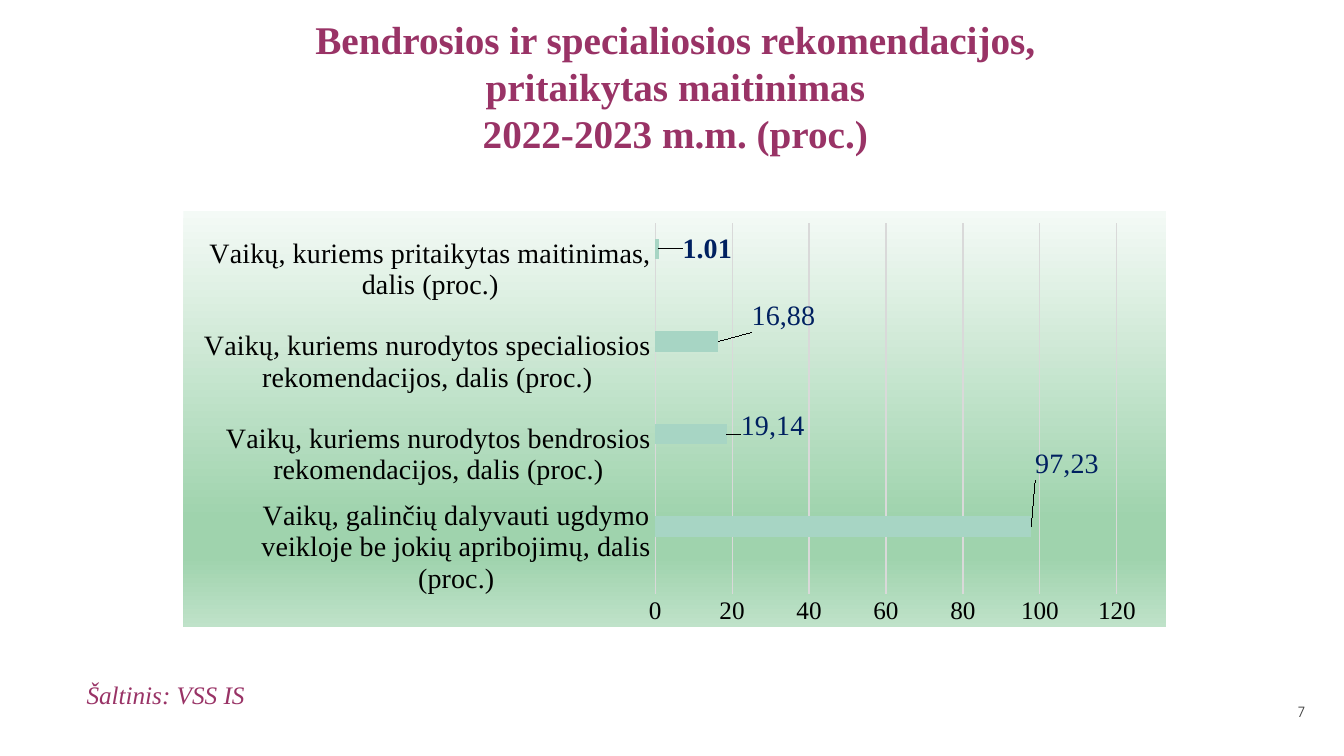
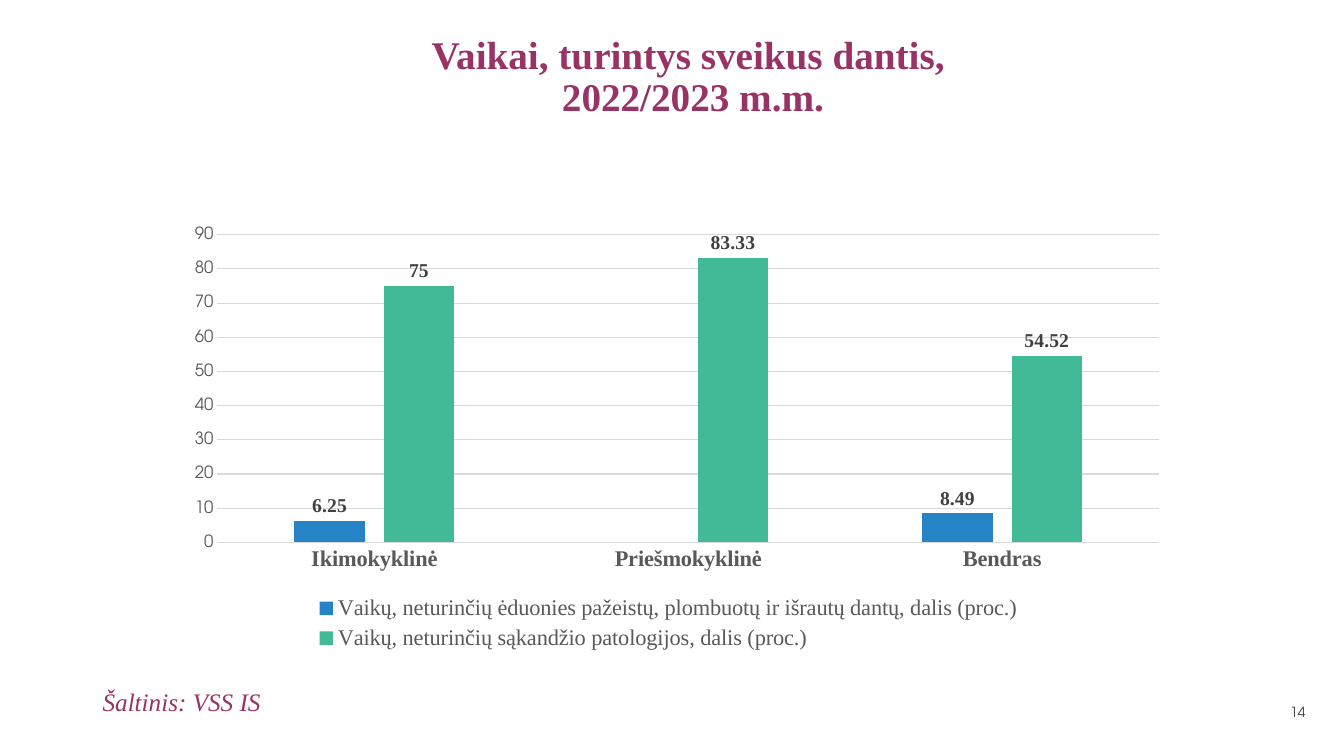
from lxml import etree
from pptx import Presentation
from pptx.chart.data import CategoryChartData
from pptx.dml.color import RGBColor
from pptx.enum.chart import XL_CHART_TYPE, XL_LABEL_POSITION, XL_LEGEND_POSITION, XL_TICK_MARK
from pptx.enum.text import MSO_ANCHOR, MSO_AUTO_SIZE, PP_ALIGN
from pptx.oxml import parse_xml
from pptx.oxml.ns import nsdecls, qn
from pptx.util import Pt

SERIF, SANS = "Times New Roman", "TeX Gyre Adventor"
PLUM, NAVY, BLACK, GREY, DARK, PALE = "993366", "002060", "000000", "595959", "404040", "D9D9D9"
SOURCE = "Šaltinis: VSS IS"

# Content; boxes are left, top, width, height in points
SLIDES = [
    dict(
        title="Bendrosios ir specialiosios rekomendacijos,\npritaikytas maitinimas\n2022-2023 m.m. (proc.)",
        head=(86.4, 7.2, 792, 108.7), anchor=MSO_ANCHOR.TOP, space=1.0,
        page="7", source=(54.7, 481.7),
        kind=XL_CHART_TYPE.BAR_CLUSTERED, box=(131, 150.5, 702, 297.4),
        plot=(0.48, 0.03, 0.47, 0.89), gap=150, overlap=0, top=120, step=20,
        cats=["Vaikų, galinčių dalyvauti ugdymo veikloje be jokių apribojimų, dalis (proc.)",
              "Vaikų, kuriems nurodytos bendrosios rekomendacijos, dalis (proc.)",
              "Vaikų, kuriems nurodytos specialiosios rekomendacijos, dalis (proc.)",
              "Vaikų, kuriems pritaikytas maitinimas, dalis (proc.)"],
        series=[("Series 1", [None] * 4, "379A7D"),
                ("Series 2", [None] * 4, "42BA97"),
                ("Series 3", [97.73, 18.69, 16.41, 1.01], "A7D5C4")],
        cat=dict(size=20, color=BLACK), line=None,
        val=dict(size=18, color=BLACK),
        label=dict(size=20, color=NAVY, bold=True),
        # Own label text (None shows the value), shift right, shift down
        moved=[("97,23", 0, -0.15), ("19,14", 0.01, -0.02), ("16,88", 0.03, -0.06), (None, 0.02, 0)],
        stops=[(0, "F4FAF6"), (74, "9FD3AD"), (83, "9FD3AD"), (100, "BFE2C9")],
    ),
    dict(
        title="Vaikai, turintys sveikus dantis, \n2022/2023 m.m.",
        head=(144, 5, 702, 100.8), anchor=MSO_ANCHOR.MIDDLE, space=0.9,
        page="14", source=(66.2, 486.7),
        kind=XL_CHART_TYPE.COLUMN_CLUSTERED, box=(119.5, 158.4, 715.7, 309.6),
        plot=(0.05, 0.03, 0.94, 0.71), gap=219, overlap=-27, top=90, step=10,
        cats=["Ikimokyklinė", "Priešmokyklinė", "Bendras"],
        series=[("Vaikų, neturinčių ėduonies pažeistų, plombuotų ir išrautų dantų, dalis (proc.)",
                 [6.25, None, 8.49], "2683C6"),
                ("Vaikų, neturinčių sąkandžio patologijos, dalis (proc.)",
                 [75, 83.33, 54.52], "42BA97")],
        cat=dict(size=16, color=GREY, bold=True), line=PALE,
        val=dict(size=12, color=GREY, name=SANS),
        label=dict(size=14, color=DARK, bold=True),
        legend=dict(size=16, color=GREY),
    ),
]


def rgb(code):
    return RGBColor.from_string(code)


def style(font, size, color, name=SERIF, bold=False, italic=False):
    font.size, font.name = Pt(size), name
    font.bold, font.italic = bold, italic
    font.color.rgb = rgb(color)


def write(frame, text, align=PP_ALIGN.LEFT, anchor=MSO_ANCHOR.TOP, wrap=True, space=1.0, **font):
    frame.word_wrap, frame.vertical_anchor = wrap, anchor
    frame.auto_size = MSO_AUTO_SIZE.NONE
    para = frame.paragraphs[0]
    para.alignment, para.line_spacing = align, space
    for i, part in enumerate(text.split("\n")):
        if i:
            para.add_line_break()
        run = para.add_run()
        run.text = part
        style(run.font, **font)


def add_text(slide, box, text, **form):
    write(slide.shapes.add_textbox(*map(Pt, box)).text_frame, text, **form)


def layout(inner, **parts):
    target = '<c:layoutTarget val="inner"/>' if inner else ""
    modes = '<c:xMode val="edge"/><c:yMode val="edge"/>' if inner else ""
    sizes = "".join(f'<c:{key} val="{val}"/>' for key, val in parts.items())
    return parse_xml(f'<c:layout {nsdecls("c")}><c:manualLayout>{target}{modes}{sizes}'
                     '</c:manualLayout></c:layout>')


def set_plot(chart, plot):
    area = chart.element.find(".//" + qn("c:plotArea"))
    for old in area.findall(qn("c:layout")):
        area.remove(old)
    area.insert(0, layout(True, **dict(zip("xywh", plot))))


def set_back(chart, stops):
    marks = "".join(f'<a:gs pos="{pos * 1000}"><a:srgbClr val="{code}"/></a:gs>' for pos, code in stops)
    back = parse_xml(f'<c:spPr {nsdecls("c", "a")}><a:gradFill><a:gsLst>{marks}</a:gsLst>'
                     '<a:lin ang="5400000" scaled="0"/></a:gradFill><a:ln><a:noFill/></a:ln></c:spPr>')
    chart.element.find(qn("c:chart")).addnext(back)


def set_axis(axis, font, line=None):
    axis.major_tick_mark = axis.minor_tick_mark = XL_TICK_MARK.NONE
    style(axis.tick_labels.font, **font)
    set_line(axis.format.line, line)


def set_line(line, color):
    if color:
        line.color.rgb, line.width = rgb(color), Pt(0.75)
    else:
        line.fill.background()


def move_labels(series, moved, font):
    for i, (text, right, down) in enumerate(moved):
        label = series.points[i].data_label
        if text:
            write(label.text_frame, text, align=PP_ALIGN.CENTER, **{**font, "bold": False})
        else:
            style(label.font, **font)
        label.position = XL_LABEL_POSITION.OUTSIDE_END
    for mark, (_, right, down) in zip(series._element.iter(qn("c:dLbl")), moved):
        mark.find(qn("c:idx")).addnext(layout(False, x=right, y=down))


def add_chart(slide, item):
    data = CategoryChartData()
    data.categories = item["cats"]
    for name, vals, _ in item["series"]:
        data.add_series(name, vals)
    chart = slide.shapes.add_chart(item["kind"], *map(Pt, item["box"]), data).chart
    chart.has_title = False
    style(chart.font, 10, BLACK, SANS)

    # Axes and grid
    set_axis(chart.category_axis, item["cat"], item["line"])
    scale = chart.value_axis
    set_axis(scale, item["val"])
    scale.minimum_scale, scale.maximum_scale, scale.major_unit = 0, item["top"], item["step"]
    scale.has_major_gridlines = True
    set_line(scale.major_gridlines.format.line, PALE)

    # Bars and their labels
    plot = chart.plots[0]
    plot.gap_width, plot.overlap, plot.vary_by_categories = item["gap"], item["overlap"], False
    for series, (_, _, color) in zip(plot.series, item["series"]):
        series.format.fill.solid()
        series.format.fill.fore_color.rgb = rgb(color)
        series.invert_if_negative = False
        labels = series.data_labels
        labels.show_value, labels.position = True, XL_LABEL_POSITION.OUTSIDE_END
        style(labels.font, **item["label"])
    if "moved" in item:
        move_labels(plot.series[-1], item["moved"], item["label"])

    # Legend, plot area and background
    chart.has_legend = "legend" in item
    if chart.has_legend:
        chart.legend.position = XL_LEGEND_POSITION.BOTTOM
        chart.legend.include_in_layout = False
        style(chart.legend.font, **item["legend"])
    set_plot(chart, item["plot"])
    if "stops" in item:
        set_back(chart, item["stops"])


def add_slide(deck, item):
    slide = deck.slides.add_slide(deck.slide_layouts[5])
    title = slide.shapes.title
    title.left, title.top, title.width, title.height = map(Pt, item["head"])
    write(title.text_frame, item["title"], align=PP_ALIGN.CENTER, anchor=item["anchor"],
          space=item["space"], size=28, color=PLUM, bold=True)
    add_chart(slide, item)
    add_text(slide, (824.4, 496.8, 115.2, 21.6), item["page"], align=PP_ALIGN.RIGHT,
             anchor=MSO_ANCHOR.BOTTOM, size=10, color=DARK, name=SANS)
    add_text(slide, (*item["source"], 128.9, 28.8), SOURCE, wrap=False, size=18, color=PLUM, italic=True)


def main():
    deck = Presentation()
    deck.slide_width, deck.slide_height = Pt(960), Pt(540)
    for item in SLIDES:
        add_slide(deck, item)
    deck.save("out.pptx")


if __name__ == "__main__":
    main()
